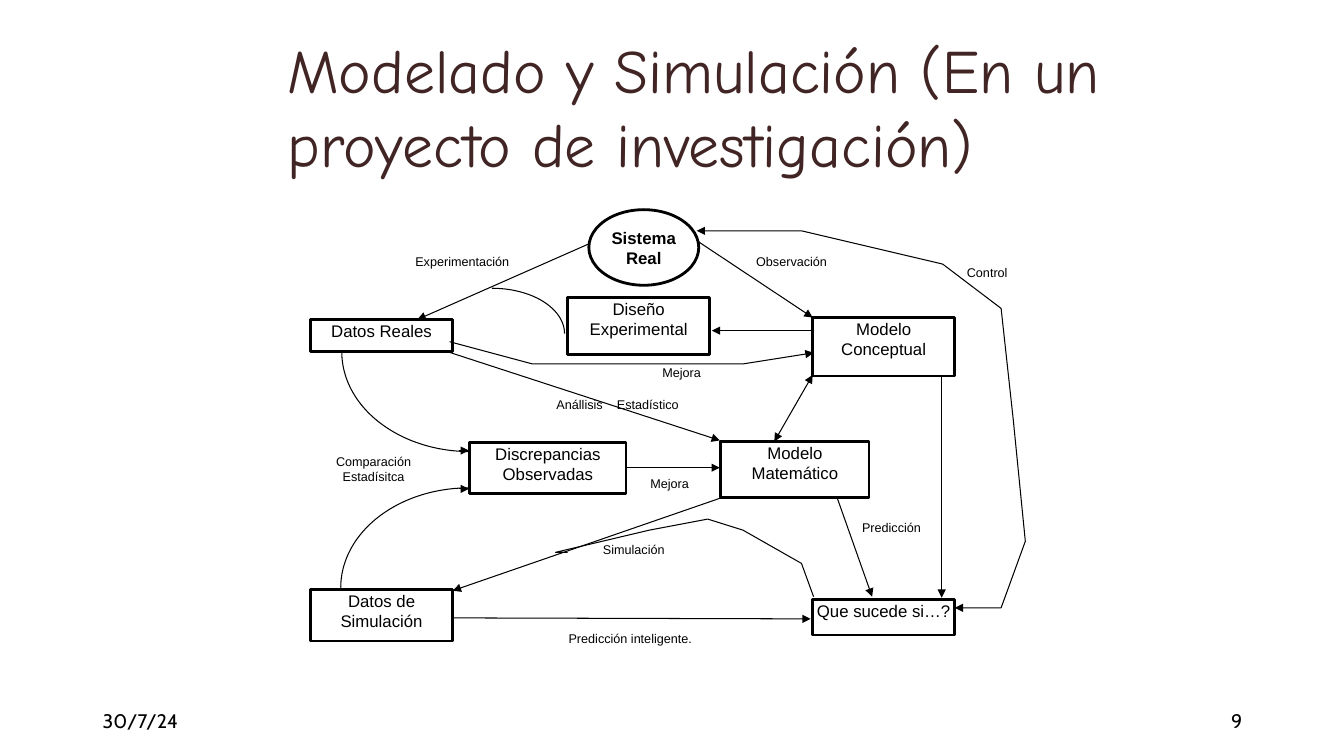
from dataclasses import dataclass

from lxml.etree import SubElement
from pptx import Presentation
from pptx.dml.color import RGBColor
from pptx.enum.shapes import MSO_CONNECTOR as Link, MSO_SHAPE as Shape
from pptx.enum.text import MSO_ANCHOR as Anchor, MSO_AUTO_SIZE as Fit, PP_ALIGN as Align
from pptx.oxml.ns import qn
from pptx.util import Inches, Pt


@dataclass(frozen=True)
class Theme:
    ink: RGBColor = RGBColor(0x00, 0x00, 0x00)
    title: RGBColor = RGBColor(0x41, 0x25, 0x24)
    head_font: str = "Comic Neue"
    foot_font: str = "Cabin"
    font: str = "Arial"
    head_size: int = 44
    foot_size: int = 14
    box_size: int = 12
    label_size: int = 9
    border: float = 2
    line: float = 0.75


THEME = Theme()
INSET = 0.01

# Boxes: left, top, width, height, text
BOXES = [
    (3.08, 3.17, 1.41, 0.32, "Datos Reales"),
    (5.63, 2.95, 1.41, 0.57, "Diseño Experimental"),
    (8.06, 3.15, 1.41, 0.58, "Modelo Conceptual"),
    (4.66, 4.39, 1.55, 0.51, "Discrepancias Observadas"),
    (7.15, 4.38, 1.47, 0.56, "Modelo Matemático"),
    (3.08, 5.85, 1.41, 0.51, "Datos de Simulación"),
    (8.06, 5.95, 1.41, 0.35, "Que sucede si…?"),
]

# Straight arrows: start, end
ARROWS = [
    ((5.84, 2.42), (4.14, 3.17)),
    ((8.04, 3.28), (7.06, 3.28)),
    ((6.93, 2.4), (8.06, 3.15)),
    ((9.34, 3.74), (9.34, 5.93)),
    ((4.49, 6.13), (8.04, 6.14)),
    ((7.15, 4.94), (4.49, 5.86)),
    ((6.2, 4.64), (7.14, 4.64)),
    ((4.55, 4.47), (4.65, 4.47)),
    ((4.55, 4.85), (4.65, 4.85)),
    ((4.41, 3.48), (7.14, 4.37)),
    ((8.3, 4.93), (8.65, 5.92)),
]

# Quarter curves: centre, radii, first angle
CURVES = [
    ((4.66, 3.49), (1.27, 0.99), 90),
    ((4.65, 5.83), (1.27, 0.99), 180),
    ((4.88, 3.31), (0.72, 0.45), 270),
]

# Bent lines: points, arrow ends
SIM_ROUTE = [(8.07, 5.92), (7.95, 5.59), (7.37, 5.26), (7.02, 5.15),
             (6.44, 5.26), (5.51, 5.48), (5.63, 5.48)]
CONTROL_ROUTE = [(6.91, 2.29), (7.95, 2.29), (9.35, 2.62), (9.93, 3.06),
                 (10.05, 4.16), (10.17, 5.37), (9.93, 6.03), (9.47, 6.03)]
DATA_ROUTE = [(4.46, 3.39), (5.28, 3.61), (7.37, 3.61), (8.07, 3.5)]
ROUTES = [
    (SIM_ROUTE, ()),
    (CONTROL_ROUTE, ("headEnd", "tailEnd")),
    (DATA_ROUTE, ("tailEnd",)),
]

# Labels: left, top, width, height, text
LABELS = [
    (4.11, 2.51, 1.16, 0.22, "Experimentación"),
    (7.49, 2.51, 1.05, 0.22, "Observación"),
    (5.97, 5.37, 0.82, 0.22, "Simulación"),
    (5.63, 6.25, 1.4, 0.33, "Predicción inteligente."),
    (6.44, 4.71, 0.58, 0.22, "Mejora"),
    (8.54, 5.15, 0.82, 0.33, "Predicción"),
    (9.58, 2.62, 0.58, 0.33, "Control"),
    (6.56, 3.61, 0.58, 0.22, "Mejora"),
]


def style(frame, size, font=THEME.font, color=THEME.ink, align=Align.LEFT,
          anchor=Anchor.TOP, inset=None, bold=False):
    frame.word_wrap = True
    frame.auto_size = Fit.NONE
    frame.vertical_anchor = anchor
    if inset is not None:
        frame.margin_left = frame.margin_right = Inches(inset)
        frame.margin_top = frame.margin_bottom = Inches(inset)
    for para in frame.paragraphs:
        para.alignment = align
        for run in para.runs:
            run.font.name, run.font.size = font, Pt(size)
            run.font.bold = bold
            run.font.color.rgb = color


def stroke(item, width, ends=()):
    item.line.color.rgb = THEME.ink
    item.line.width = Pt(width)
    for end in ends:
        SubElement(item.line._get_or_add_ln(), qn("a:" + end), type="triangle")


def outline(shape, width, ends=()):
    shape.shadow.inherit = False
    shape.fill.background()
    stroke(shape, width, ends)


def add_node(slide, kind, spot, text, **look):
    node = slide.shapes.add_shape(kind, *map(Inches, spot))
    outline(node, THEME.border)
    node.text_frame.text = text
    style(node.text_frame, THEME.box_size, align=Align.CENTER, inset=INSET, **look)


def add_arrow(slide, start, end, ends=("tailEnd",)):
    arrow = slide.shapes.add_connector(Link.STRAIGHT, *map(Inches, start + end))
    stroke(arrow, THEME.line, ends)
    SubElement(arrow._element.spPr, qn("a:effectLst"))


def add_curve(slide, center, radii, angle):
    (x, y), (rx, ry) = center, radii
    curve = slide.shapes.add_shape(
        Shape.ARC, *map(Inches, (x - rx, y - ry, 2 * rx, 2 * ry)))
    # Angles are held in 60000ths of a degree, adjustments in 100000ths
    curve.adjustments[0] = angle * 0.6
    curve.adjustments[1] = (angle + 90) % 360 * 0.6
    outline(curve, THEME.line)


def add_route(slide, points, ends):
    first, *rest = [(Inches(x), Inches(y)) for x, y in points]
    pen = slide.shapes.build_freeform(*first)
    pen.add_line_segments(rest, close=False)
    outline(pen.convert_to_shape(), THEME.line, ends)


def add_text(slide, spot, text, size, **look):
    box = slide.shapes.add_textbox(*map(Inches, spot))
    box.text_frame.text = text
    style(box.text_frame, size, **look)
    return box.text_frame


def add_label(slide, spot, text, align=Align.LEFT):
    return add_text(slide, spot, text, THEME.label_size, align=align, inset=INSET)


def set_tab(para, place):
    tabs = SubElement(para._p.get_or_add_pPr(), qn("a:tabLst"))
    SubElement(tabs, qn("a:tab"), pos=str(Inches(place)), algn="l")


def set_title(slide, text):
    title = slide.shapes.title
    title.left, title.top = Inches(2.75), Inches(0.58)
    title.width, title.height = Inches(8.5), Inches(1.25)
    title.text_frame.text = text
    style(title.text_frame, THEME.head_size, THEME.head_font, THEME.title,
          anchor=Anchor.BOTTOM)


def main():
    deck = Presentation()
    deck.slide_width, deck.slide_height = Inches(13.33), Inches(7.5)
    slide = deck.slides.add_slide(deck.slide_layouts[5])

    # Title and footer
    set_title(slide, "Modelado y Simulación (En un proyecto de investigación)")
    for left, text, align in ((0.92, "30/7/24", Align.LEFT), (9.42, "9", Align.RIGHT)):
        add_text(slide, (left, 6.95, 3, 0.4), text, THEME.foot_size,
                 font=THEME.foot_font, align=align, anchor=Anchor.MIDDLE)

    # Nodes
    add_node(slide, Shape.OVAL, (5.84, 2.08, 1.09, 0.75), "Sistema\nReal",
             anchor=Anchor.MIDDLE, bold=True)
    for *spot, text in BOXES:
        add_node(slide, Shape.RECTANGLE, spot, text)

    # Links
    for start, end in ARROWS:
        add_arrow(slide, start, end)
    add_arrow(slide, (8.06, 3.72), (7.68, 4.38), ("headEnd", "tailEnd"))
    for curve in CURVES:
        add_curve(slide, *curve)
    for points, ends in ROUTES:
        add_route(slide, points, ends)

    # Labels
    for *spot, text in LABELS:
        add_label(slide, spot, text)
    add_label(slide, (3.18, 4.49, 1.05, 0.44), "Comparación\nEstadísitca", Align.CENTER)
    study = add_label(slide, (5.51, 3.93, 1.4, 0.33), "Anállisis\tEstadístico")
    set_tab(study.paragraphs[0], 0.6)

    deck.save("out.pptx")


if __name__ == "__main__":
    main()
